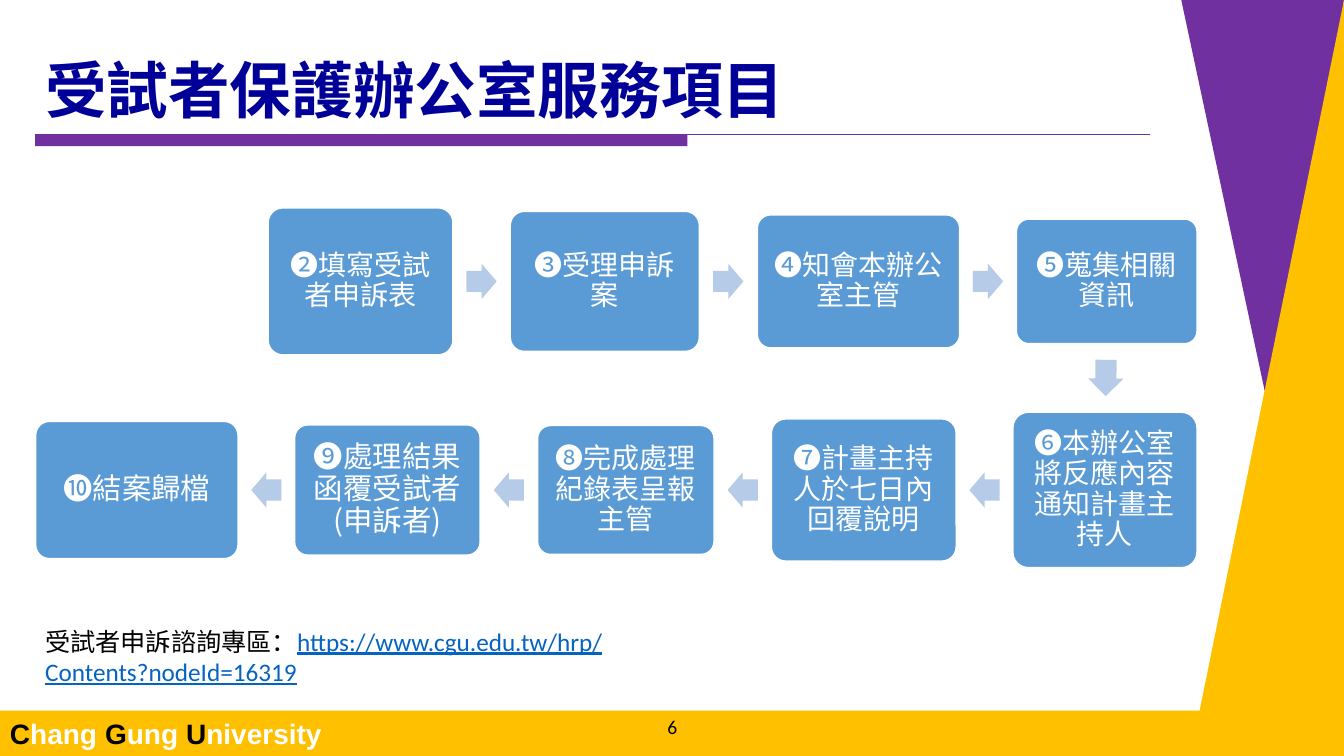
"""Build the slide on the complaint steps of the subject protection office."""
from dataclasses import dataclass
from itertools import pairwise
from typing import Optional

from lxml.etree import SubElement
from pptx import Presentation
from pptx.dml.color import RGBColor
from pptx.enum.shapes import MSO_CONNECTOR as LINK, MSO_SHAPE as KIND
from pptx.enum.text import MSO_ANCHOR as ANCHOR, PP_ALIGN as ALIGN
from pptx.oxml.ns import qn
from pptx.shapes.autoshape import Shape
from pptx.util import Pt

PURPLE = RGBColor(0x70, 0x30, 0xA0)
GOLD = RGBColor(0xFF, 0xC0, 0x00)
NAVY = RGBColor(0x00, 0x00, 0x99)
BLUE = RGBColor(0x5B, 0x9B, 0xD5)
PALE = RGBColor(0xB5, 0xCB, 0xE7)
LINKED = RGBColor(0x05, 0x63, 0xC1)
WHITE = RGBColor(0xFF, 0xFF, 0xFF)
BLACK = RGBColor(0x00, 0x00, 0x00)

SANS = "Noto Sans CJK SC"
HAN = "Noto Sans CJK JP"
TOP, LOW = 201, 350


@dataclass
class Span:
    text: str
    color: Optional[RGBColor] = None
    font: Optional[str] = None
    under: bool = False


@dataclass
class Style:
    size: float
    color: RGBColor
    font: str
    han: str = HAN
    bold: bool = False
    align: ALIGN = ALIGN.LEFT
    anchor: ANCHOR = ANCHOR.MIDDLE
    space: float = 1.0


@dataclass
class Step:
    left: float
    mid: float
    width: float
    height: float
    spans: list[Span]
    size: float = 20

    @property
    def center(self) -> float:
        return self.left + self.width / 2


STEPS = [
    Step(191.5, TOP, 132, 105, [Span("❷", font="Montserrat"), Span("填寫受試者申訴表")]),
    Step(364.5, TOP, 135, 100, [Span("❸受理申訴案")]),
    Step(541, TOP, 144.5, 95, [Span("❹知會本辦公室主管")]),
    Step(726, TOP, 129, 89, [Span("❺蒐集相關資訊")]),
    Step(723.5, LOW, 131.5, 111, [Span("❻本辦公室將反應內容通知計畫主持人")]),
    Step(551, LOW, 132, 101.5, [Span("❼計畫主持人於七日內回覆說明")]),
    Step(384, LOW, 126, 92, [Span("❽完成處理紀錄表呈報主管")]),
    Step(210.5, LOW, 132.5, 93, [Span("❾處理結果函覆受試者(申訴者)")], 21),
    Step(25.5, LOW, 144.5, 98, [Span("❿結案歸檔")], 21),
]


def write(shape: Shape, spans: list[Span], style: Style) -> None:
    frame = shape.text_frame
    frame.word_wrap = True
    frame.vertical_anchor = style.anchor
    para = frame.paragraphs[0]
    para.alignment = style.align
    para.line_spacing = style.space
    font = para.font
    font.size, font.bold, font.name = Pt(style.size), style.bold, style.font
    font.color.rgb = style.color
    base = para._p.pPr.find(qn("a:defRPr"))
    SubElement(base, qn("a:ea")).set("typeface", style.han)
    for span in spans:
        run = para.add_run()
        run.text = span.text
        if span.color is not None:
            run.font.color.rgb = span.color
        if span.font:
            run.font.name = span.font
        if span.under:
            run.font.underline = True


def paint(shape: Shape, fill: RGBColor, line: Optional[RGBColor] = None) -> Shape:
    shape.shadow.inherit = False
    shape.fill.solid()
    shape.fill.fore_color.rgb = fill
    if line is None:
        shape.line.fill.background()
    else:
        shape.line.color.rgb = line
        shape.line.width = Pt(1)
    return shape


def block(shapes, kind: KIND, left: float, top: float, width: float,
          height: float, fill: RGBColor, line: Optional[RGBColor] = None) -> Shape:
    shape = shapes.add_shape(kind, Pt(left), Pt(top), Pt(width), Pt(height))
    return paint(shape, fill, line)


def wedge(shapes, dots: list[tuple[float, float]], fill: RGBColor) -> None:
    first, *rest = [(Pt(x), Pt(y)) for x, y in dots]
    form = shapes.build_freeform(*first)
    form.add_line_segments(rest, close=True)
    paint(form.convert_to_shape(), fill)


def label(shapes, left: float, top: float, width: float, height: float,
          spans: list[Span], style: Style) -> None:
    box = shapes.add_textbox(Pt(left), Pt(top), Pt(width), Pt(height))
    write(box, spans, style)


def card(shapes, step: Step) -> None:
    box = block(shapes, KIND.ROUNDED_RECTANGLE, step.left,
                step.mid - step.height / 2, step.width, step.height, BLUE, WHITE)
    box.adjustments[0] = 0.1
    frame = box.text_frame
    frame.margin_left = frame.margin_right = Pt(6)
    frame.margin_top = frame.margin_bottom = Pt(6)
    write(box, step.spans, Style(step.size, WHITE, HAN, align=ALIGN.CENTER, space=0.9))


def arrow(shapes, a: Step, b: Step) -> None:
    wide, high = 21.6, 25.2
    if a.mid != b.mid:
        wide, turn = 26, 90.5
        x = (a.center + b.center) / 2
        y = (a.mid + a.height / 2 + b.mid - b.height / 2) / 2
    else:
        turn = 0 if a.left < b.left else 180
        one, two = sorted((a, b), key=lambda step: step.left)
        x, y = (one.left + one.width + two.left) / 2, a.mid
    shape = block(shapes, KIND.RIGHT_ARROW, x - wide / 2, y - high / 2, wide, high, PALE)
    shape.adjustments[0], shape.adjustments[1] = 0.6, 0.5
    shape.rotation = turn


def frame_page(shapes) -> None:
    wedge(shapes, [(960, 0), (843.8, 0), (912.2, 320.4)], PURPLE)
    wedge(shapes, [(960, 0), (856.8, 508), (960, 508)], GOLD)
    foot = block(shapes, KIND.RECTANGLE, 0, 507.6, 960, 32.4, GOLD)
    words = [Span("C", BLACK), Span("hang "), Span("G", BLACK), Span("ung "),
             Span("U", BLACK), Span("niversity")]
    write(foot, words, Style(20, WHITE, "Arial", bold=True))
    block(shapes, KIND.RECTANGLE, 25.2, 95.8, 465.8, 8.6, PURPLE)
    rule = shapes.add_connector(LINK.STRAIGHT, Pt(25.2), Pt(95.8), Pt(821.5), Pt(95.8))
    rule.line.color.rgb = PURPLE
    rule.line.width = Pt(0.75)
    SubElement(rule._element.spPr, qn("a:effectLst"))


def main() -> None:
    deck = Presentation()
    deck.slide_width, deck.slide_height = Pt(960), Pt(540)
    shapes = deck.slides.add_slide(deck.slide_layouts[6]).shapes
    frame_page(shapes)
    label(shapes, 25.2, 28.8, 796.3, 65.5, [Span("受試者保護辦公室服務項目")],
          Style(44, NAVY, SANS, SANS, True, anchor=ANCHOR.BOTTOM, space=0.9))
    label(shapes, 380.9, 509, 198.7, 20.2, [Span("6")],
          Style(14, BLACK, "Calibri", align=ALIGN.CENTER))
    address = "https://www.cgu.edu.tw/hrp/Contents?nodeId=16319"
    label(shapes, 25.2, 443.5, 480.2, 51,
          [Span("受試者申訴諮詢專區："), Span(address, LINKED, under=True)],
          Style(18, BLACK, "Calibri", anchor=ANCHOR.TOP))
    for step in STEPS:
        card(shapes, step)
    for a, b in pairwise(STEPS):
        arrow(shapes, a, b)
    deck.save("out.pptx")


if __name__ == "__main__":
    main()
